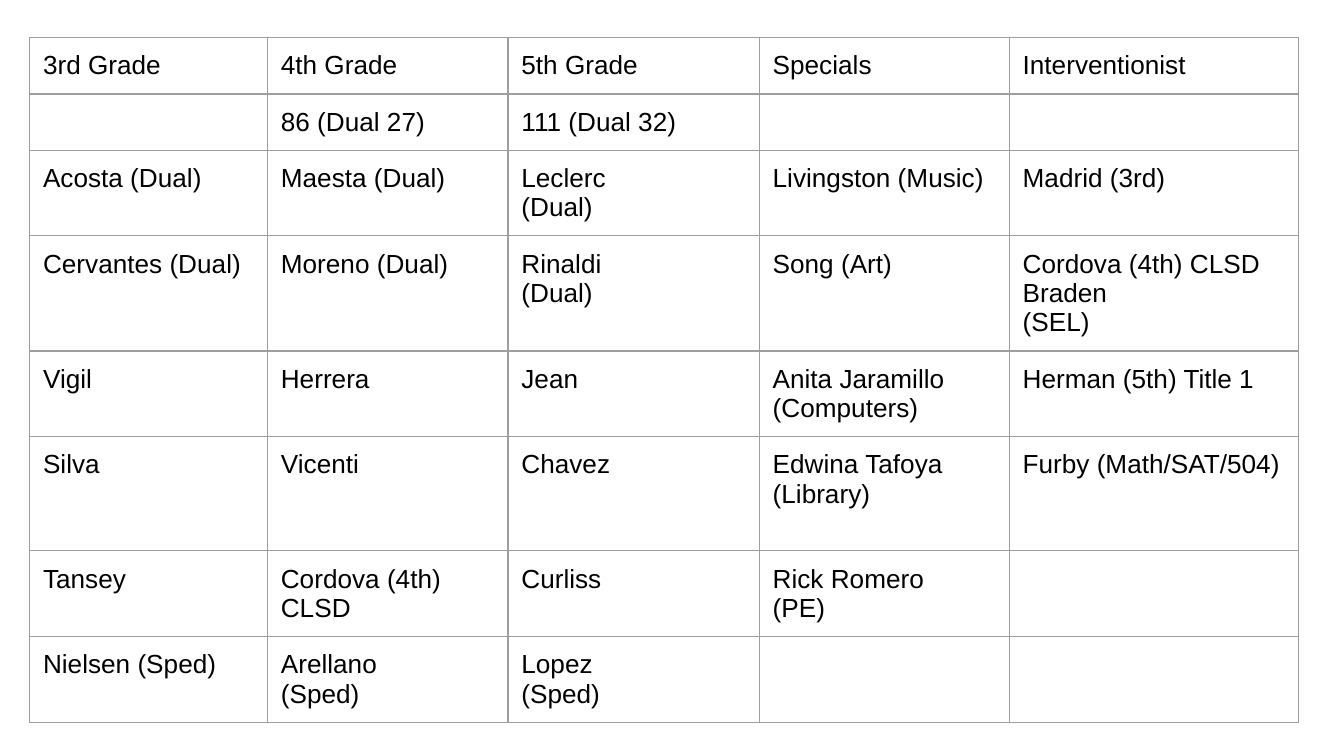
from lxml.etree import SubElement
from pptx import Presentation
from pptx.dml.color import RGBColor
from pptx.oxml.ns import qn
from pptx.util import Inches, Pt

COLORS = {"text": "000000", "border": "9E9E9E"}
FONT_NAME = "Arial"
FONT_SIZE = Pt(14)
BORDER_WIDTH = Pt(0.75)
CELL_MARGIN = Inches(0.1)

COLUMN_WIDTHS = [1.77, 1.79, 1.87, 1.86, 2.15]
ROW_HEIGHTS = [0.41, 0.41, 0.63, 0.85, 0.63, 0.85, 0.63, 0.63]
STAFF = [
    ["3rd Grade", "4th Grade", "5th Grade", "Specials", "Interventionist"],
    ["", "86 (Dual 27)", "111 (Dual 32)", "", ""],
    ["Acosta (Dual)", "Maesta (Dual)", "Leclerc\n(Dual)",
     "Livingston (Music)", "Madrid (3rd)"],
    ["Cervantes (Dual)", "Moreno (Dual)", "Rinaldi\n(Dual)",
     "Song (Art)", "Cordova (4th) CLSD\nBraden\n(SEL)"],
    ["Vigil", "Herrera", "Jean",
     "Anita Jaramillo (Computers)", "Herman (5th) Title 1"],
    ["Silva", "Vicenti", "Chavez",
     "Edwina Tafoya\n(Library)", "Furby (Math/SAT/504)"],
    ["Tansey", "Cordova (4th) CLSD", "Curliss", "Rick Romero\n(PE)", ""],
    ["Nielsen (Sped)", "Arellano\n(Sped)", "Lopez\n(Sped)", "", ""],
]


def set_borders(cell):
    properties = cell._tc.get_or_add_tcPr()
    for position, side in enumerate(("a:lnL", "a:lnR", "a:lnT", "a:lnB")):
        line = SubElement(properties, qn(side), w=str(BORDER_WIDTH))
        fill = SubElement(line, qn("a:solidFill"))
        SubElement(fill, qn("a:srgbClr"), val=COLORS["border"])
        properties.insert(position, line)


def fill_cell(cell, text):
    cell.margin_left = cell.margin_right = CELL_MARGIN
    cell.margin_top = cell.margin_bottom = CELL_MARGIN
    cell.fill.background()
    set_borders(cell)
    cell.text = text
    for paragraph in cell.text_frame.paragraphs:
        paragraph.font.name = FONT_NAME
        paragraph.font.size = FONT_SIZE
        paragraph.font.color.rgb = RGBColor.from_string(COLORS["text"])
        if not text:
            # An empty paragraph takes its line height from its end mark.
            end_mark = SubElement(paragraph._p, qn("a:endParaRPr"))
            end_mark.set("sz", str(FONT_SIZE.centipoints))


def add_staff_table(slide):
    frame = slide.shapes.add_table(
        len(STAFF), len(COLUMN_WIDTHS), Inches(0.22), Inches(0.28),
        Inches(sum(COLUMN_WIDTHS)), Inches(sum(ROW_HEIGHTS)))
    table = frame.table
    table.first_row = False
    table.horz_banding = False
    for column, width in zip(table.columns, COLUMN_WIDTHS):
        column.width = Inches(width)
    for row, height, texts in zip(table.rows, ROW_HEIGHTS, STAFF):
        row.height = Inches(height)
        for cell, text in zip(row.cells, texts):
            fill_cell(cell, text)


def main():
    presentation = Presentation()
    presentation.slide_width = Inches(10)
    presentation.slide_height = Inches(10) * 9 // 16
    blank_layout = presentation.slide_layouts[6]
    slide = presentation.slides.add_slide(blank_layout)
    add_staff_table(slide)
    presentation.save("out.pptx")


if __name__ == "__main__":
    main()
